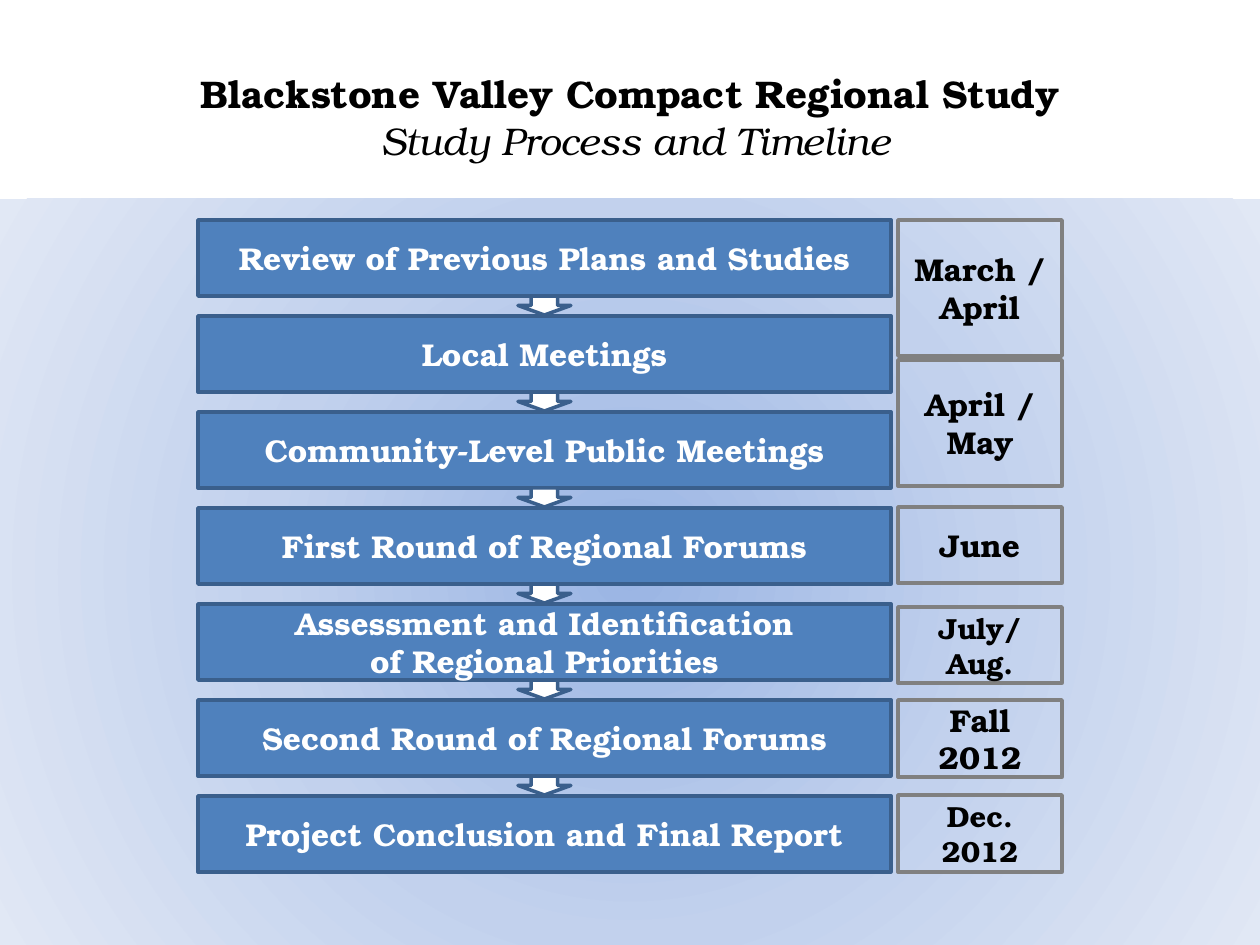
from pptx import Presentation
from pptx.dml.color import RGBColor
from pptx.enum.shapes import MSO_SHAPE
from pptx.enum.text import MSO_ANCHOR, PP_ALIGN
from pptx.oxml import parse_xml
from pptx.util import Emu, Pt

PROCESS = MSO_SHAPE.FLOWCHART_PROCESS
DOWN_ARROW = MSO_SHAPE.DOWN_ARROW
RECTANGLE = MSO_SHAPE.RECTANGLE
MIDDLE = MSO_ANCHOR.MIDDLE
CENTER = PP_ALIGN.CENTER

PX_PER_INCH = 126
FONT = "TeX Gyre Bonum"
BLACK = RGBColor(0x00, 0x00, 0x00)
WHITE = RGBColor(0xFF, 0xFF, 0xFF)
BLUE = RGBColor(0x4F, 0x81, 0xBD)
DARK_BLUE = RGBColor(0x3A, 0x5F, 0x8C)
GRAY = RGBColor(0x80, 0x80, 0x80)
GLOW_STOPS = [
    (0, RGBColor(0x9A, 0xB5, 0xE4)),
    (50, RGBColor(0xC2, 0xD1, 0xED)),
    (100, RGBColor(0xE1, 0xE8, 0xF5)),
]
DRAWING_NS = "http://schemas.openxmlformats.org/drawingml/2006/main"

STEPS = [
    ["Review of Previous Plans and Studies"],
    ["Local Meetings"],
    ["Community-Level Public Meetings"],
    ["First Round of Regional Forums"],
    ["Assessment and Identification", "of Regional Priorities"],
    ["Second Round of Regional Forums"],
    ["Project Conclusion and Final Report"],
]
MONTHS = [
    ("March / April", 0, 136, 18),
    ("April / May", 140, 126, 18),
    ("June", 287, 76, 18),
    ("July/ Aug.", 387, 76, 16.6),
    ("Fall 2012", 480, 77, 18),
    ("Dec. 2012", 575, 77, 16.6),
]


def px(length):
    """Turn pixels into EMU."""
    return Emu(round(length * 914400 / PX_PER_INCH))


def apply_format(target, values):
    """Set each named attribute of the target."""
    for name, value in values.items():
        setattr(target, name, value)


def style_font(font, size, color, bold=True, italic=False):
    """Give a font its face, size, colour and emphasis."""
    apply_format(font, {"name": FONT, "size": Pt(size), "bold": bold, "italic": italic})
    font.color.rgb = color


def add_block(slide, kind, box, fill=None, line=None):
    """Add a preset shape with a plain fill and outline."""
    shape = slide.shapes.add_shape(kind, *map(px, box))
    shape.shadow.inherit = False
    if fill is None:
        shape.fill.background()
    else:
        shape.fill.solid()
        shape.fill.fore_color.rgb = fill
    if line is None:
        shape.line.fill.background()
    else:
        shape.line.color.rgb = line
        shape.line.width = Pt(2)
    return shape


def write_label(shape, lines, size, color):
    """Write centred bold paragraphs in a shape."""
    frame = shape.text_frame
    apply_format(frame, {"word_wrap": True, "vertical_anchor": MIDDLE})
    frame.text = "\n".join(lines)
    for paragraph in frame.paragraphs:
        paragraph.alignment = CENTER
        style_font(paragraph.runs[0].font, size, color)


def add_backdrop(slide, box):
    """Add the panel with a round blue glow."""
    shape = add_block(slide, RECTANGLE, box)
    stops = "".join(
        f'<a:gs pos="{position * 1000}"><a:srgbClr val="{color}"/></a:gs>'
        for position, color in GLOW_STOPS
    )
    gradient = parse_xml(
        f'<a:gradFill xmlns:a="{DRAWING_NS}" rotWithShape="1"><a:gsLst>{stops}</a:gsLst>'
        '<a:path path="circle"><a:fillToRect l="50000" t="50000" r="50000" b="50000"/>'
        "</a:path></a:gradFill>"
    )
    properties = shape.element.spPr
    no_fill = properties.find(f"{{{DRAWING_NS}}}noFill")
    properties.replace(no_fill, gradient)


def add_title(slide, box):
    """Add the study name with its italic second line."""
    frame = slide.shapes.add_textbox(*map(px, box)).text_frame
    apply_format(frame, {"word_wrap": True, "vertical_anchor": MIDDLE})
    paragraph = frame.paragraphs[0]
    paragraph.alignment = CENTER
    name = paragraph.add_run()
    name.text = "Blackstone Valley Compact Regional Study"
    style_font(name.font, 22, BLACK)
    paragraph.add_line_break()
    subtitle = paragraph.add_run()
    subtitle.text = " Study Process and Timeline"
    style_font(subtitle.font, 22, BLACK, bold=False, italic=True)


def add_process(slide, box):
    """Add the column of steps joined by arrows."""
    left, top, width, height = box
    step_height, arrow_width, arrow_height = 76, 53, 19
    pitch = (height - step_height) / (len(STEPS) - 1)
    for index, lines in enumerate(STEPS):
        step_box = (left, top + index * pitch, width, step_height)
        step = add_block(slide, PROCESS, step_box, BLUE, DARK_BLUE)
        write_label(step, lines, 18, WHITE)
    arrow_left = left + (width - arrow_width) / 2
    for index in range(len(STEPS) - 1):
        arrow_top = top + index * pitch + step_height
        arrow_box = (arrow_left, arrow_top, arrow_width, arrow_height)
        add_block(slide, DOWN_ARROW, arrow_box, WHITE, DARK_BLUE)


def add_timeline(slide, box):
    """Add the column of months beside the steps."""
    left, top, width, _ = box
    for label, offset, height, size in MONTHS:
        month = add_block(slide, PROCESS, (left, top + offset, width, height), line=GRAY)
        write_label(month, [label], size, BLACK)


def main():
    """Build and save the slide."""
    presentation = Presentation()
    apply_format(presentation, {"slide_width": px(1260), "slide_height": px(945)})
    slide = presentation.slides.add_slide(presentation.slide_layouts[6])
    add_backdrop(slide, (0, 199, 1260, 746))
    add_title(slide, (63, 38, 1134, 157))
    add_process(slide, (198, 220, 693, 652))
    add_timeline(slide, (898, 220, 164, 652))
    presentation.save("out.pptx")


if __name__ == "__main__":
    main()
